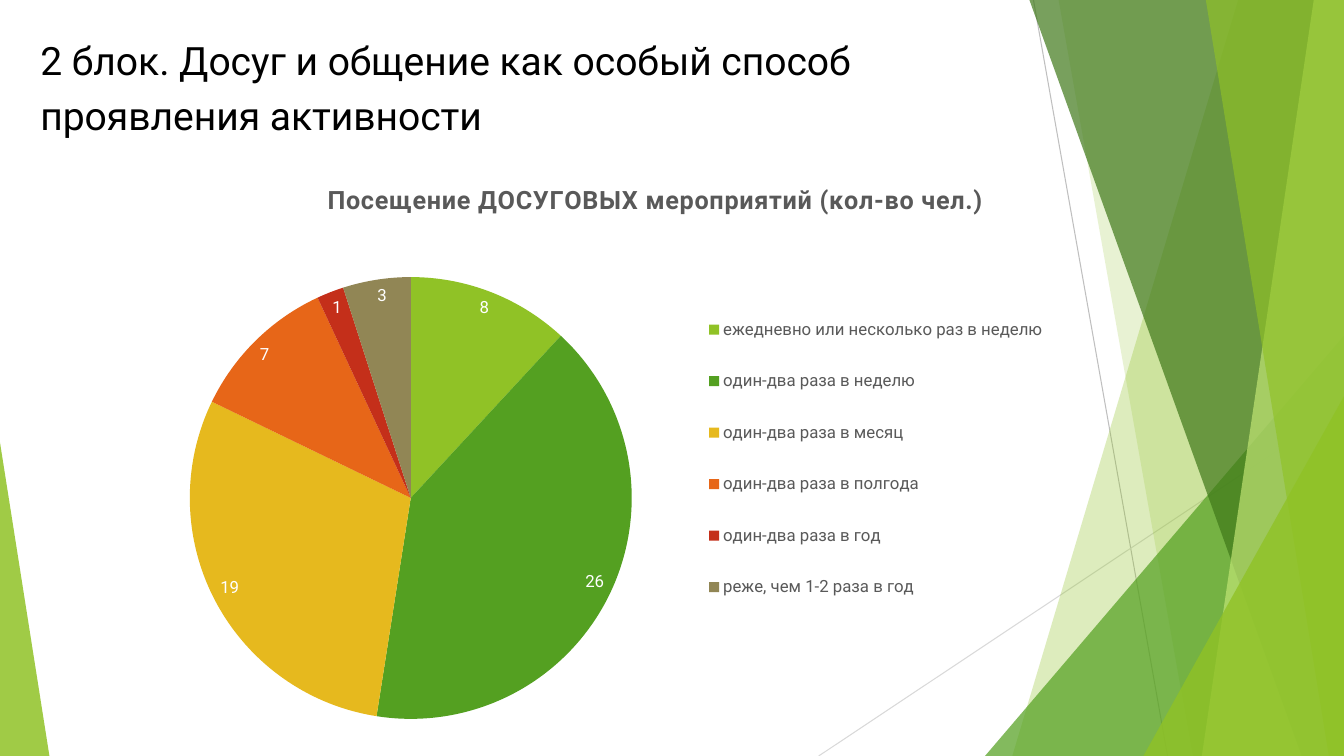
"""Build a slide with a pie chart of leisure event attendance."""
from lxml import etree
from pptx import Presentation
from pptx.chart.data import CategoryChartData
from pptx.dml.color import RGBColor
from pptx.enum.chart import XL_CHART_TYPE, XL_LABEL_POSITION, XL_LEGEND_POSITION
from pptx.enum.shapes import MSO_CONNECTOR, MSO_SHAPE
from pptx.enum.text import MSO_ANCHOR, MSO_AUTO_SIZE, PP_ALIGN
from pptx.oxml import parse_xml
from pptx.oxml.ns import nsdecls, qn
from pptx.util import Inches, Pt

PIE = XL_CHART_TYPE.PIE
INSIDE_END = XL_LABEL_POSITION.INSIDE_END
RIGHT = XL_LEGEND_POSITION.RIGHT
STRAIGHT = MSO_CONNECTOR.STRAIGHT
TRIANGLE = MSO_SHAPE.ISOSCELES_TRIANGLE
TOP = MSO_ANCHOR.TOP
LEFT = PP_ALIGN.LEFT
NO_FIT = MSO_AUTO_SIZE.NONE

FONT = "Roboto"
WIDTH, HEIGHT = 13.33, 7.5
TITLE = "2 блок. Досуг и общение как особый способ проявления активности"
CHART_TITLE = "Посещение ДОСУГОВЫХ мероприятий (кол-во чел.)"
ANSWERS = [
    ("ежедневно или несколько раз в неделю", 12, "8", "90C226"),
    ("один-два раза в неделю", 41, "26", "54A021"),
    ("один-два раза в месяц", 30, "19", "E6B91E"),
    ("один-два раза в полгода", 11, "7", "E76618"),
    ("один-два раза в год", 2, "1", "C42F1A"),
    ("реже, чем 1-2 раза в год", 5, "3", "918655"),
]
RAYS = [((10.25, 0), (11.58, HEIGHT), "BFBFBF"), ((WIDTH, 4.03), (8.12, HEIGHT), "D9D9D9")]
# Each band runs from a top x to a bottom x and reaches the right edge.
BACK_BANDS = [(12.28, 10.04, "90C226", 30), (10.5, 11.83, "90C226", 20)]
FRONT_BANDS = [(10.21, 12.91, "3F7819", 70), (13.03, 11.92, "C0E474", 70), (11.96, 13.18, "90C226", 65)]
BACK_WEDGE = (9.77, 3.33, 3.56, 1, "54A021", 72)
FRONT_WEDGES = [(11.34, 3.93, 1.99, 1, "90C226", 80), (0, 4.39, 0.49, 0, "90C226", 85)]


def rgb(value):
    return RGBColor.from_string(value)


def style(font, size, color, bold=False):
    font.name, font.size, font.bold = FONT, Pt(size), bold
    font.color.rgb = rgb(color)


def paint(sp, color, opacity):
    sp.shadow.inherit = False
    sp.line.fill.background()
    sp.fill.solid()
    sp.fill.fore_color.rgb = rgb(color)
    clr = sp.fill._xPr.find(qn("a:solidFill"))[0]
    etree.SubElement(clr, qn("a:alpha")).set("val", str(opacity * 1000))


def add_ray(s, start, end, color):
    line = s.shapes.add_connector(STRAIGHT, *map(Inches, start + end))
    line.line.color.rgb = rgb(color)
    line.line.width = Pt(0.75)
    etree.SubElement(line._element.spPr, qn("a:effectLst"))


def add_band(s, top_x, bottom_x, color, opacity):
    fb = s.shapes.build_freeform(Inches(top_x), 0)
    corners = [(WIDTH, 0), (WIDTH, HEIGHT), (bottom_x, HEIGHT)]
    fb.add_line_segments([(Inches(x), Inches(y)) for x, y in corners])
    paint(fb.convert_to_shape(), color, opacity)


def add_wedge(s, x, y, width, tip, color, opacity):
    sp = s.shapes.add_shape(TRIANGLE, Inches(x), Inches(y), Inches(width), Inches(HEIGHT - y))
    sp.adjustments[0] = tip
    paint(sp, color, opacity)


def layout_xml(x, y, size=None, inner=False):
    target = '<c:layoutTarget val="inner"/>' if inner else ""
    fields = [("xMode", "edge"), ("yMode", "edge"), ("x", x), ("y", y)]
    if size:
        fields += zip("wh", size)
    body = "".join(f'<c:{tag} val="{val}"/>' for tag, val in fields)
    return parse_xml(f'<c:layout {nsdecls("c")}><c:manualLayout>{target}{body}</c:manualLayout></c:layout>')


def place(element, before, layout):
    for old in element.findall(qn("c:layout")):
        element.remove(old)
    element.find(qn(before)).addprevious(layout)


def add_title(s):
    sp = s.shapes.title
    sp.left, sp.top, sp.width, sp.height = map(Inches, (0.3, 0.24, 10.01, 1.4))
    tf = sp.text_frame
    tf.text = TITLE
    tf.word_wrap, tf.auto_size, tf.vertical_anchor = True, NO_FIT, TOP
    p = tf.paragraphs[0]
    p.alignment, p.line_spacing = LEFT, 1.16
    style(p.runs[0].font, 27.9, "000000")
    s.shapes._spTree.append(sp._element)


def add_pie(s):
    names, values, _, _ = zip(*ANSWERS)
    data = CategoryChartData()
    data.categories = names
    data.add_series("Series 1", values)
    box = map(Inches, (0.15, 1.54, 11.31, 5.73))
    chart = s.shapes.add_chart(PIE, *box, data).chart
    style(chart.font, 10, "000000")

    chart.has_title = True
    tf = chart.chart_title.text_frame
    tf.text = CHART_TITLE
    r = tf.paragraphs[0].runs[0]
    style(r.font, 18, "595959", True)
    r.font._element.set("spc", "50")
    chart.chart_title.include_in_layout = False
    place(chart.chart_title._element, "c:overlay", layout_xml(0.27, 0.04))

    chart.has_legend = True
    chart.legend.position = RIGHT
    chart.legend.include_in_layout = False
    style(chart.legend.font, 12, "595959")
    place(chart.legend._element, "c:overlay", layout_xml(0.6, 0.23, (0.31, 0.59)))

    plot = chart.plots[0]
    plot.vary_by_categories = True
    place(plot._element.getparent(), "c:pieChart", layout_xml(0.153, 0.211, (0.388, 0.765), True))
    series = plot.series[0]
    labels = series.data_labels
    labels.show_value = True
    labels.position = INSIDE_END
    style(labels.font, 12, "FFFFFF")
    for i, (_, _, count, color) in enumerate(ANSWERS):
        point = series.points[i]
        point.format.fill.solid()
        point.format.fill.fore_color.rgb = rgb(color)
        point.format.line.fill.background()
        tf = point.data_label.text_frame
        tf.text = count
        style(tf.paragraphs[0].runs[0].font, 12, "FFFFFF")
        point.data_label.position = INSIDE_END


def main():
    prs = Presentation()
    prs.slide_width, prs.slide_height = Inches(WIDTH), Inches(HEIGHT)
    s = prs.slides.add_slide(prs.slide_layouts[5])
    for ray in RAYS:
        add_ray(s, *ray)
    for band in BACK_BANDS:
        add_band(s, *band)
    add_wedge(s, *BACK_WEDGE)
    for band in FRONT_BANDS:
        add_band(s, *band)
    for wedge in FRONT_WEDGES:
        add_wedge(s, *wedge)
    add_title(s)
    add_pie(s)
    prs.save("out.pptx")


if __name__ == "__main__":
    main()
